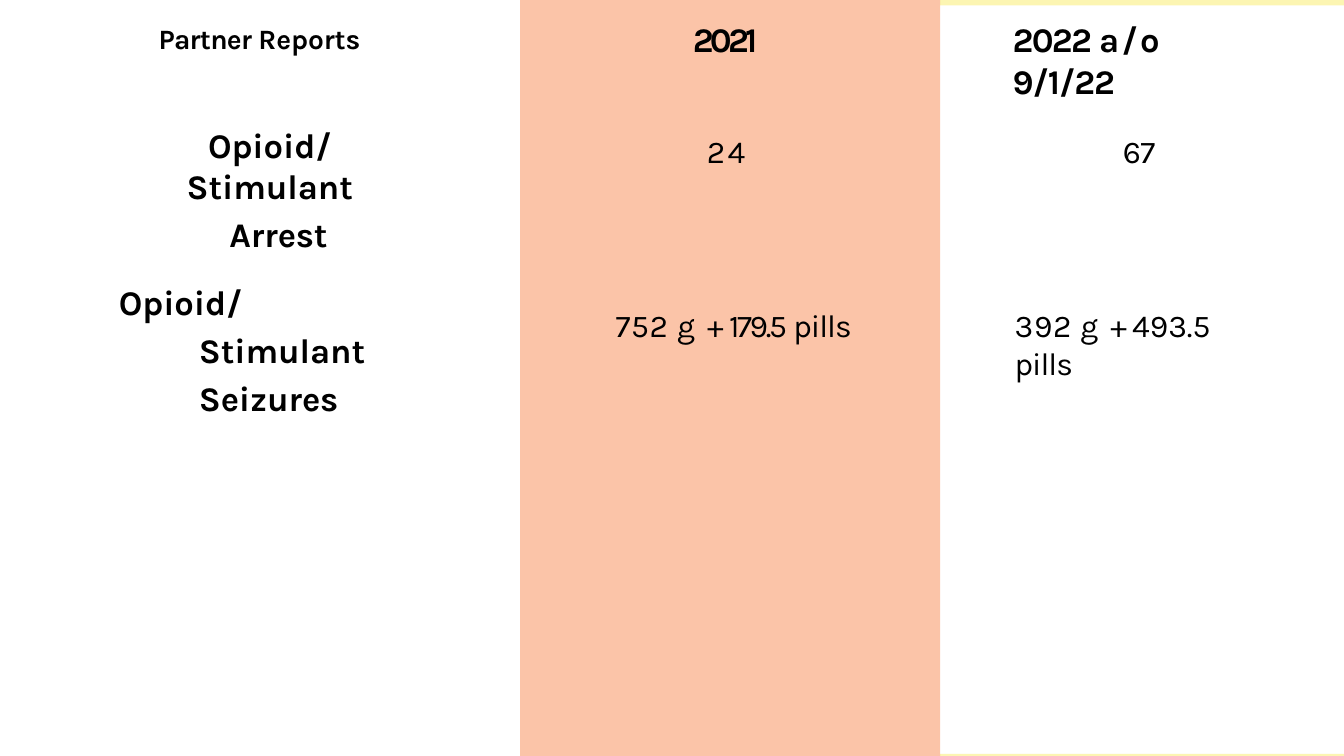
from lxml.etree import SubElement
from pptx import Presentation
from pptx.dml.color import RGBColor
from pptx.enum.shapes import MSO_SHAPE
from pptx.enum.text import MSO_ANCHOR, MSO_AUTO_SIZE, PP_ALIGN
from pptx.oxml.ns import qn
from pptx.util import Inches, Pt

COLORS = {"text": "000000", "yellow": "F9E220", "orange": "F65301"}
FONT = "Karla"
HEADING, LABEL, VALUE = 37, 30, 34
TITLE_ONLY = 5

SLIDE_WIDTH, SLIDE_HEIGHT = 20, 11.25
COLUMN_2021, COLUMN_2022 = 7.74, 13.99
HEADER_TOP, ARREST_TOP, SEIZURE_TOP = 0.26, 1.95, 4.54


class SlideBuilder:
    def __init__(self, slide):
        self.slide = slide

    def band(self, left, top, width, height, color):
        """Draw a translucent rectangle without an outline."""
        shape = self.slide.shapes.add_shape(
            MSO_SHAPE.RECTANGLE, Inches(left), Inches(top), Inches(width), Inches(height))
        shape.shadow.inherit = False
        shape.fill.solid()
        shape.fill.fore_color.rgb = RGBColor.from_string(COLORS[color])
        shape.line.fill.background()
        color_element = shape.element.spPr.find(qn("a:solidFill"))[0]
        SubElement(color_element, qn("a:alpha"), val="34000")

    def title(self, left, top, width, height, runs):
        shape = self.slide.shapes.title
        shape.left, shape.top = Inches(left), Inches(top)
        shape.width, shape.height = Inches(width), Inches(height)
        self.slide.shapes.element.append(shape.element)  # in front of the bands
        self.frame(shape)
        self.paragraph(shape, runs, HEADING, bold=True)

    def text_box(self, left, top, width, height, inset=0.01):
        shape = self.slide.shapes.add_textbox(
            Inches(left), Inches(top), Inches(width), Inches(height))
        self.frame(shape, inset)
        return shape

    def text(self, left, top, width, height, runs, size, bold=False):
        self.paragraph(self.text_box(left, top, width, height), runs, size, bold)

    def frame(self, shape, inset=0.01):
        frame = shape.text_frame
        frame.margin_left = frame.margin_right = frame.margin_bottom = 0
        frame.margin_top = Inches(inset)
        frame.vertical_anchor = MSO_ANCHOR.TOP
        frame.word_wrap = True
        frame.auto_size = MSO_AUTO_SIZE.SHAPE_TO_FIT_TEXT

    def paragraph(self, shape, runs, size, bold=False, margin=0.01, indent=0,
                  before=1, align=PP_ALIGN.LEFT, line_spacing=1.0):
        """Fill the empty first paragraph or add one; runs are (text, tracking in points)."""
        frame = shape.text_frame
        paragraph = frame.add_paragraph() if frame.text else frame.paragraphs[0]
        paragraph.alignment = align
        paragraph.space_before = Pt(before)
        paragraph.line_spacing = line_spacing
        properties = paragraph._p.get_or_add_pPr()
        properties.set("marL", str(Inches(margin)))
        properties.set("indent", str(Inches(indent)))
        paragraph.font.name = FONT
        paragraph.font.size = Pt(size)
        paragraph.font.bold = bold
        paragraph.font.color.rgb = RGBColor.from_string(COLORS["text"])
        for text, tracking in runs:
            run = paragraph.add_run()
            run.text = text
            run.font._element.set("spc", str(round(tracking * 100)))


def main():
    presentation = Presentation()
    presentation.slide_width = Inches(SLIDE_WIDTH)
    presentation.slide_height = Inches(SLIDE_HEIGHT)
    layout = presentation.slide_layouts[TITLE_ONLY]
    builder = SlideBuilder(presentation.slides.add_slide(layout))

    edge_width = SLIDE_WIDTH - COLUMN_2022
    builder.band(COLUMN_2022, 11.22, edge_width, 0.03, "yellow")
    builder.band(COLUMN_2022, 0, edge_width, 0.08, "yellow")
    builder.band(COLUMN_2021, 0, COLUMN_2022 - COLUMN_2021, SLIDE_HEIGHT, "orange")

    # Column headers
    builder.text(2.35, 0.31, 3.02, 0.53, [("Partner ", -0.8), ("Reports", -0.1)],
                 LABEL, bold=True)
    builder.title(10.3, HEADER_TOP, 1.03, 0.64, [("2021", -4)])
    builder.text(15.06, HEADER_TOP, 3.78, 0.64,
                 [("2022 ", -1.8), ("a/o ", 2.5), ("9/1/22", -1.1)], HEADING, bold=True)

    # Row labels
    arrests = builder.text_box(1.92, 1.72, 4.19, 1.47, inset=0.12)
    builder.paragraph(arrests, [("Opioid/Stimulant", -0.1)], HEADING, bold=True,
                      margin=0, before=8.3, align=PP_ALIGN.CENTER)
    builder.paragraph(arrests, [("Arrest", -0.1)], HEADING, bold=True,
                      margin=0.26, before=7.3, align=PP_ALIGN.CENTER)
    seizures = builder.text_box(1.76, 4.06, 4.19, 1.47)
    builder.paragraph(seizures, [("Opioid/Stimulant Seizures", -0.1)], HEADING, bold=True,
                      margin=1.2, indent=-1.19, before=0.9, line_spacing=1.17)

    # Values
    for left, top, width, runs in (
        (10.51, ARREST_TOP, 0.6, [("24", 2.5)]),
        (16.7, ARREST_TOP, 0.5, [("67", -0.6)]),
        (9.15, SEIZURE_TOP, 3.58,
         [("752 ", 0.8), ("g ", 2.4), ("+ ", -2.4), ("179.5", -2.5), (" pills", -1.1)]),
        (15.09, SEIZURE_TOP, 3.74,
         [("392 ", 0.7), ("g ", 2.4), ("+ ", -2.4), ("493.5 ", 0), ("pills", -1.1)]),
    ):
        builder.text(left, top, width, 0.59, runs, VALUE)

    presentation.save("out.pptx")


if __name__ == "__main__":
    main()
